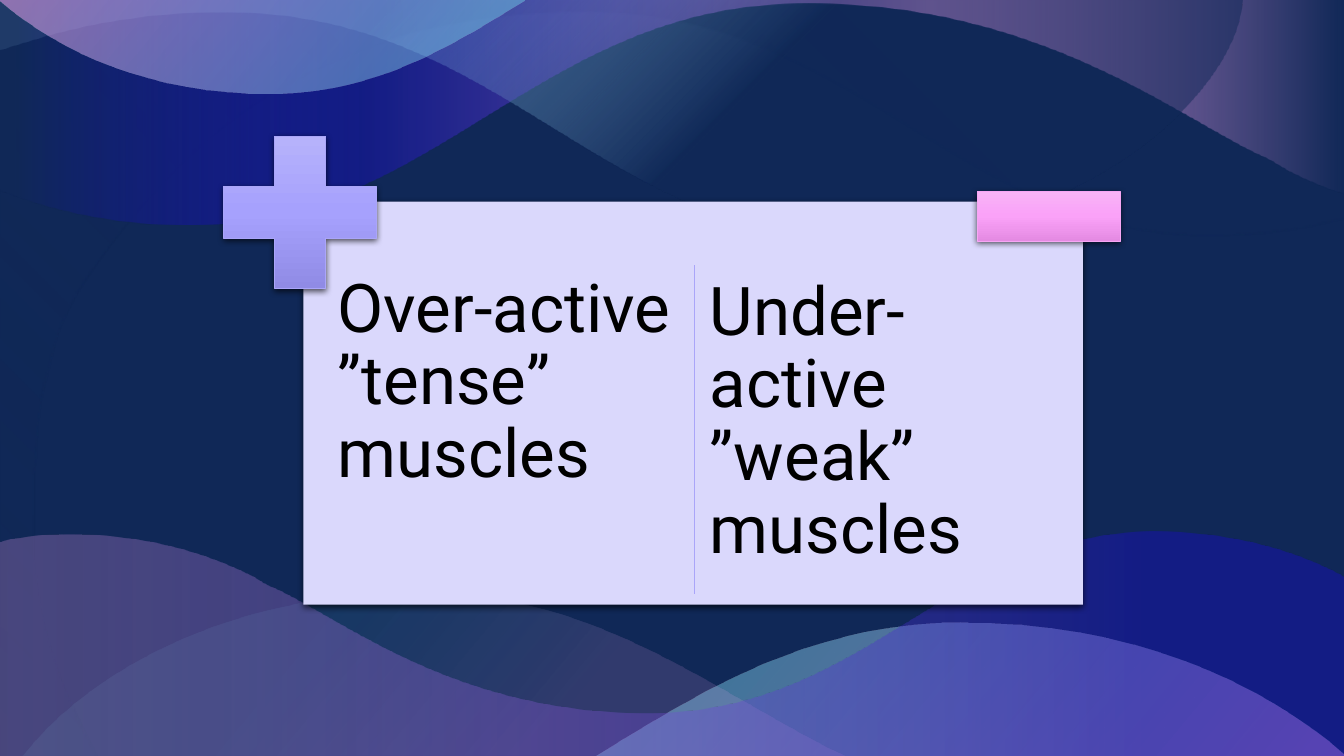
import pptx
import pptx.dml.color
import pptx.enum.shapes
import pptx.oxml
import pptx.oxml.ns
import pptx.util
from lxml import etree

# The grid has square cells of one inch.
COLUMNS, ROWS = 13.33, 7.5
CELL = pptx.util.Inches(1)

NAVY, BLUE, TEAL, PINK, SKY = "102857", "180DC2", "64DFED", "F6A6F4", "92CDF0"
LAVENDER = "AAA5F9"
CORNER_RIGHT = {"l": 100, "t": 100, "r": 0, "b": 0}
CORNER_LEFT = {"l": 0, "t": 100, "r": 100, "b": 0}

# In an outline, a pair is a straight step and six numbers are a Bezier curve.
LOWER_RIGHT_HILL = [
    (9.52, 6.18), (11.2, 6.17, 12.52, 6.77, 13.33, 7.48), (13.33, 7.5),
    (5.9, 7.5), (6.26, 7.28), (7.22, 6.7, 8.21, 6.19, 9.52, 6.18)]
UPPER_SWEEP = [
    (8.42, 2.34), (10.7, 2.35, 12.14, 0.99, 12.3, 0.13), (12.32, 0), (0, 0),
    (0, 0.5), (0.23, 0.43), (0.83, 0.24, 1.53, 0.11, 2.34, 0.13),
    (4.94, 0.17, 5.99, 2.33, 8.42, 2.34)]
BACKDROP = [
    (0, 0), (13.33, 0), (13.33, 2.17), (13.16, 2.21),
    (12.8, 2.3, 12.4, 2.34, 11.97, 2.34), (9.54, 2.33, 8.49, 0.17, 5.9, 0.13),
    (5.29, 0.12, 4.75, 0.18, 4.26, 0.3), (4.2, 0.31), (4.05, 0.35),
    (3.29, 0.58, 2.55, 0.92, 1.85, 1.59), (1.39, 2.04, 1.03, 2.5, 0.75, 2.95),
    (0.62, 3.21, 0.57, 3.3, 0.51, 3.58), (0.45, 3.83, 0.39, 3.98, 0.37, 4.36),
    (0.35, 4.7), (0.35, 5.48), (0.35, 5.49, 0.35, 5.51, 0.35, 5.52),
    (0.4, 6.2, 0.6, 6.77, 0.86, 7.29), (0.97, 7.5), (0, 7.5)]
LOWER_LEFT_HILL = [
    (4.18, 5.88), (5.85, 5.89, 6.93, 6.75, 8.2, 7.41), (8.39, 7.5),
    (0.22, 7.5), (0.34, 7.36), (0.99, 6.62, 2.34, 5.87, 4.18, 5.88)]
LOWER_WAVE = [
    (11.43, 5.27), (12.17, 5.27, 12.8, 5.44, 13.29, 5.7), (13.33, 5.73),
    (13.33, 7.5), (0, 7.5), (0, 5.38), (0.05, 5.36),
    (0.24, 5.32, 0.44, 5.3, 0.66, 5.3), (1.4, 5.29, 2.03, 5.47, 2.52, 5.72),
    (2.65, 5.8), (2.7, 5.82), (3.38, 6.12, 4.53, 7.1, 6.5, 7.07),
    (8.6, 7.03, 9.45, 5.28, 11.43, 5.27)]
UPPER_WAVE = [
    (0, 0), (13.33, 0), (13.33, 1.92), (13.24, 1.89),
    (13.06, 1.83, 12.9, 1.76, 12.75, 1.68), (12.6, 1.59), (12.54, 1.56),
    (11.71, 1.2, 10.3, 0, 7.9, 0.04), (5.34, 0.08, 4.3, 2.21, 1.9, 2.23),
    (1.22, 2.23, 0.62, 2.11, 0.11, 1.92), (0, 1.88)]
UPPER_LEFT_BOWL = [
    (2.68, 0.93), (1.5, 0.93, 0.59, 0.52, 0.01, 0.02), (0, 0.01), (5.2, 0.01),
    (4.95, 0.16), (4.28, 0.57, 3.59, 0.92, 2.68, 0.93)]

# Gradient stops are position, colour and opacity, both numbers in percent.
TEAL_TO_PINK = [(0, TEAL, 43), (100, PINK, 53)]
SWEEP_STOPS = [(43, NAVY, 50), (73, SKY, 11)]
WAVES = [
    (LOWER_RIGHT_HILL, TEAL_TO_PINK, 40),
    (UPPER_SWEEP, SWEEP_STOPS, CORNER_RIGHT),
    (BACKDROP, [(0, NAVY, 60), (77, NAVY, 29)], CORNER_LEFT),
    (LOWER_LEFT_HILL, [(33, PINK, 14), (66, TEAL, 8)], 220),
    (LOWER_WAVE, [(0, PINK, 24), (85, BLUE, 42)], 0),
    (UPPER_WAVE,
     [(0, NAVY, 100), (31, PINK, 69), (73, BLUE, 42), (99, NAVY, 100)], 180),
    (UPPER_SWEEP, SWEEP_STOPS, CORNER_RIGHT),
    (UPPER_LEFT_BOWL, TEAL_TO_PINK, 220),
]


def cells(*counts):
    return [round(count * CELL) for count in counts]


def colour(hex_string):
    return pptx.dml.color.RGBColor.from_string(hex_string)


def add_child(parent, tag, **attributes):
    child = etree.SubElement(parent, pptx.oxml.ns.qn(tag))
    for name, value in attributes.items():
        child.set(name, str(value))
    return child


def add_colour(parent, hex_string, opacity):
    add_child(add_child(parent, "a:srgbClr", val=hex_string),
              "a:alpha", val=opacity * 1000)


def set_gradient(shape, stops, direction):
    """Direction is an angle in degrees, or the focus insets of a circle."""
    shape.fill.gradient()
    gradient = shape.element.spPr.find(pptx.oxml.ns.qn("a:gradFill"))
    for child in list(gradient):
        gradient.remove(child)
    stop_list = add_child(gradient, "a:gsLst")
    for position, hex_string, opacity in stops:
        add_colour(add_child(stop_list, "a:gs", pos=position * 1000),
                   hex_string, opacity)
    if isinstance(direction, dict):
        circle = add_child(gradient, "a:path", path="circle")
        add_child(circle, "a:fillToRect",
                  **{side: inset * 1000 for side, inset in direction.items()})
    else:
        add_child(gradient, "a:lin", ang=direction * 60000, scaled=0)


def set_shadow(shape):
    shape.shadow.inherit = False
    effects = shape.element.spPr.find(pptx.oxml.ns.qn("a:effectLst"))
    shadow = add_child(effects, "a:outerShdw", blurRad=pptx.util.Pt(4.5),
                       dist=pptx.util.Pt(1.5), dir=90 * 60000, algn="ctr",
                       rotWithShape=0)
    add_colour(shadow, "000000", 63)


def bend_curves(wave, outline):
    """Swap the straight segments of the curved steps for Bezier segments."""
    segments = list(wave.element.spPr.iter(pptx.oxml.ns.qn("a:lnTo")))
    for segment, step in zip(segments, outline[1:]):
        if len(step) == 6:
            curve = etree.Element(pptx.oxml.ns.qn("a:cubicBezTo"))
            lengths = cells(*step)
            for x, y in zip(lengths[::2], lengths[1::2]):
                add_child(curve, "a:pt", x=x - wave.left, y=y - wave.top)
            segment.getparent().replace(segment, curve)


def add_wave(slide, outline, stops, direction):
    anchors = [cells(*step[-2:]) for step in outline]
    builder = slide.shapes.build_freeform(*anchors[0])
    builder.add_line_segments(anchors[1:], close=True)
    wave = builder.convert_to_shape()
    bend_curves(wave, outline)
    wave.shadow.inherit = False
    wave.line.fill.background()
    set_gradient(wave, stops, direction)


def add_panel(slide, *box):
    panel = slide.shapes.add_shape(
        pptx.enum.shapes.MSO_SHAPE.RECTANGLE, *cells(*box))
    panel.fill.solid()
    panel.fill.fore_color.rgb = colour("DAD8FC")
    panel.line.fill.background()
    set_shadow(panel)


def add_sign(slide, kind, box, shades, outline_colour):
    sign = slide.shapes.add_shape(kind, *cells(*box))
    set_gradient(sign, [(position, shade, 100) for position, shade
                        in zip((0, 50, 100), shades)], 90)
    sign.line.color.rgb = colour(outline_colour)
    sign.line.width = pptx.util.Pt(0.5)
    set_shadow(sign)
    return sign


def add_caption(slide, text, *box):
    frame = slide.shapes.add_textbox(*cells(*box)).text_frame
    frame.word_wrap = True
    frame.margin_left = frame.margin_right = cells(0.1)[0]
    frame.margin_top = frame.margin_bottom = cells(0.1)[0]
    paragraph = frame.paragraphs[0]
    paragraph.text = text
    paragraph.line_spacing = 0.9
    paragraph.font.name = "Roboto"
    paragraph.font.size = pptx.util.Pt(48)
    paragraph.font.color.rgb = colour("000000")


def add_divider(slide, x, top, bottom):
    divider = slide.shapes.add_connector(
        pptx.enum.shapes.MSO_CONNECTOR.STRAIGHT, *cells(x, top, x, bottom))
    divider.line.color.rgb = colour(LAVENDER)
    divider.line.width = pptx.util.Pt(1)
    add_child(divider.element.spPr, "a:effectLst")


def main():
    presentation = pptx.Presentation()
    presentation.slide_width, presentation.slide_height = cells(COLUMNS, ROWS)
    slide = presentation.slides.add_slide(presentation.slide_layouts[6])
    slide.background.fill.solid()
    slide.background.fill.fore_color.rgb = colour(NAVY)
    for outline, stops, direction in WAVES:
        add_wave(slide, outline, stops, direction)
    add_panel(slide, 3.01, 2, 7.73, 4)
    add_caption(slide, "Over-active ”tense” muscles", 3.25, 2.62, 3.59, 3.42)
    add_caption(slide, "Under-active ”weak” muscles", 6.94, 2.65, 3.75, 3.42)
    shapes = pptx.enum.shapes.MSO_SHAPE
    plus = add_sign(slide, shapes.CROSS, (2.22, 1.35, 1.51, 1.51),
                    ("B6B2FB", "A6A1FD", "908BE5"), LAVENDER)
    plus.adjustments[0] = 0.33
    add_sign(slide, shapes.RECTANGLE, (9.69, 1.9, 1.42, 0.49),
             ("F8B3F7", "FAA2F8", "E48AE2"), PINK)
    add_divider(slide, 6.89, 2.63, 5.89)
    presentation.save("out.pptx")


if __name__ == "__main__":
    main()
